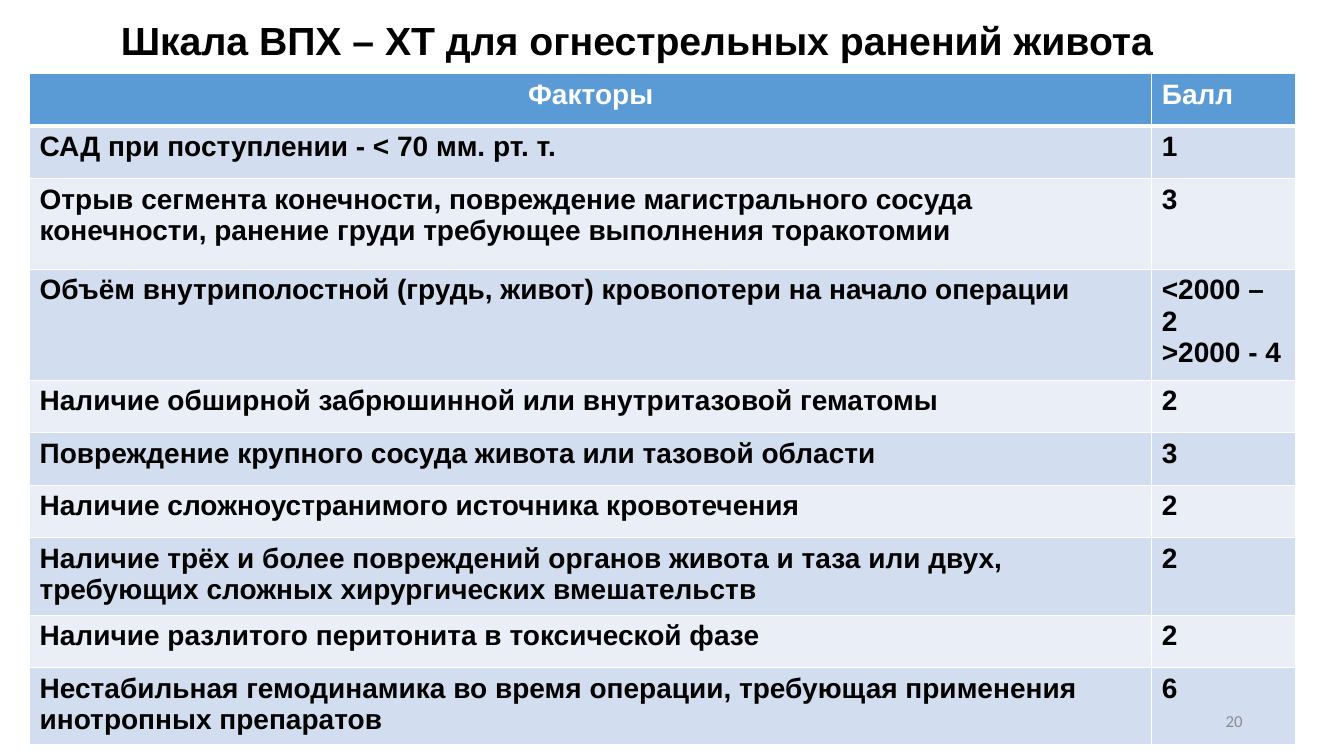
from lxml.etree import SubElement
from pptx import Presentation
from pptx.dml.color import RGBColor
from pptx.enum.text import MSO_ANCHOR, PP_ALIGN
from pptx.oxml.ns import qn
from pptx.util import Inches, Pt

BLACK = RGBColor(0x00, 0x00, 0x00)
WHITE = RGBColor(0xFF, 0xFF, 0xFF)
GRAY = RGBColor(0x8C, 0x8C, 0x8C)
HEADER_BLUE = RGBColor(0x5B, 0x9B, 0xD5)
BAND_DARK = RGBColor(0xD2, 0xDE, 0xEF)
BAND_LIGHT = RGBColor(0xEA, 0xEF, 0xF7)

FACTORS = [
    ("Факторы", "Балл"),
    ("САД при поступлении - < 70 мм. рт. т.", "1"),
    ("Отрыв сегмента конечности, повреждение магистрального сосуда конечности, "
     "ранение груди требующее выполнения торакотомии", "3"),
    ("Объём внутриполостной (грудь, живот) кровопотери на начало операции",
     "<2000 – 2\n>2000 - 4"),
    ("Наличие обширной забрюшинной или внутритазовой гематомы", "2"),
    ("Повреждение крупного сосуда живота или тазовой области", "3"),
    ("Наличие сложноустранимого источника кровотечения", "2"),
    ("Наличие трёх и более повреждений органов живота и таза или двух, "
     "требующих сложных хирургических вмешательств", "2"),
    ("Наличие разлитого перитонита в токсической фазе", "2"),
    ("Нестабильная гемодинамика во время операции, требующая применения "
     "инотропных препаратов", "6"),
]
COLUMN_WIDTHS = (83.5, 10.7)
ROW_HEIGHT = 6.95
TALL_ROW_HEIGHT = 12
TALL_ROWS = (2, 3)


class ScoreSlide:
    heading_font = "Arial"
    number_font = "Calibri"

    def __init__(self, presentation):
        self.width = presentation.slide_width
        self.height = presentation.slide_height
        self.slide = presentation.slides.add_slide(presentation.slide_layouts[6])

    def across(self, percent):
        return round(self.width * percent / 100)

    def down(self, percent):
        return round(self.height * percent / 100)

    def fill_text(self, text_frame, text, size, color, font, bold=True,
                  align=PP_ALIGN.LEFT, line_spacing=None):
        text_frame.text = text
        for paragraph in text_frame.paragraphs:
            paragraph.alignment = align
            paragraph.line_spacing = line_spacing
            for run in paragraph.runs:
                run.font.name = font
                run.font.size = Pt(size)
                run.font.bold = bold
                run.font.color.rgb = color

    def text(self, text, left, top, width, height, **style):
        box = self.slide.shapes.add_textbox(
            self.across(left), self.down(top), self.across(width), self.down(height))
        box.text_frame.word_wrap = True
        box.text_frame.vertical_anchor = MSO_ANCHOR.MIDDLE
        self.fill_text(box.text_frame, text, **style)

    def borders(self, cell, bottom):
        properties = cell._tc.get_or_add_tcPr()
        for side, points in (("L", 1), ("R", 1), ("T", 1), ("B", bottom)):
            line = SubElement(properties, qn(f"a:ln{side}"), w=str(Pt(points)))
            fill = SubElement(line, qn("a:solidFill"))
            SubElement(fill, qn("a:srgbClr"), val=str(WHITE))

    def table(self, rows, left, top):
        heights = [TALL_ROW_HEIGHT if index in TALL_ROWS else ROW_HEIGHT
                   for index in range(len(rows))]
        table = self.slide.shapes.add_table(
            len(rows), len(COLUMN_WIDTHS), self.across(left), self.down(top),
            self.across(sum(COLUMN_WIDTHS)), self.down(sum(heights))).table
        for column, width in zip(table.columns, COLUMN_WIDTHS):
            column.width = self.across(width)
        for row_index, (values, height) in enumerate(zip(rows, heights)):
            row = table.rows[row_index]
            row.height = self.down(height)
            is_header = row_index == 0
            band = BAND_DARK if row_index % 2 else BAND_LIGHT
            for column_index, (cell, value) in enumerate(zip(row.cells, values)):
                centered = is_header and column_index == 0
                self.fill_text(cell.text_frame, value, size=20,
                               color=WHITE if is_header else BLACK,
                               font=self.heading_font,
                               align=PP_ALIGN.CENTER if centered else PP_ALIGN.LEFT)
                self.borders(cell, bottom=3 if is_header else 1)
                cell.fill.solid()
                cell.fill.fore_color.rgb = HEADER_BLUE if is_header else band


def main():
    presentation = Presentation()
    presentation.slide_width = Inches(13.33)
    presentation.slide_height = Inches(7.5)
    score = ScoreSlide(presentation)
    score.text("Шкала ВПХ – ХТ для огнестрельных ранений живота",
               8.25, 0, 86.4, 11.2, size=28, color=BLACK,
               font=score.heading_font, line_spacing=0.9)
    score.table(FACTORS, left=2.2, top=9.75)
    score.text("20", 70.7, 92.7, 22.5, 5.3, size=12, color=GRAY,
               font=score.number_font, bold=False, align=PP_ALIGN.RIGHT)
    presentation.save("out.pptx")


if __name__ == "__main__":
    main()
